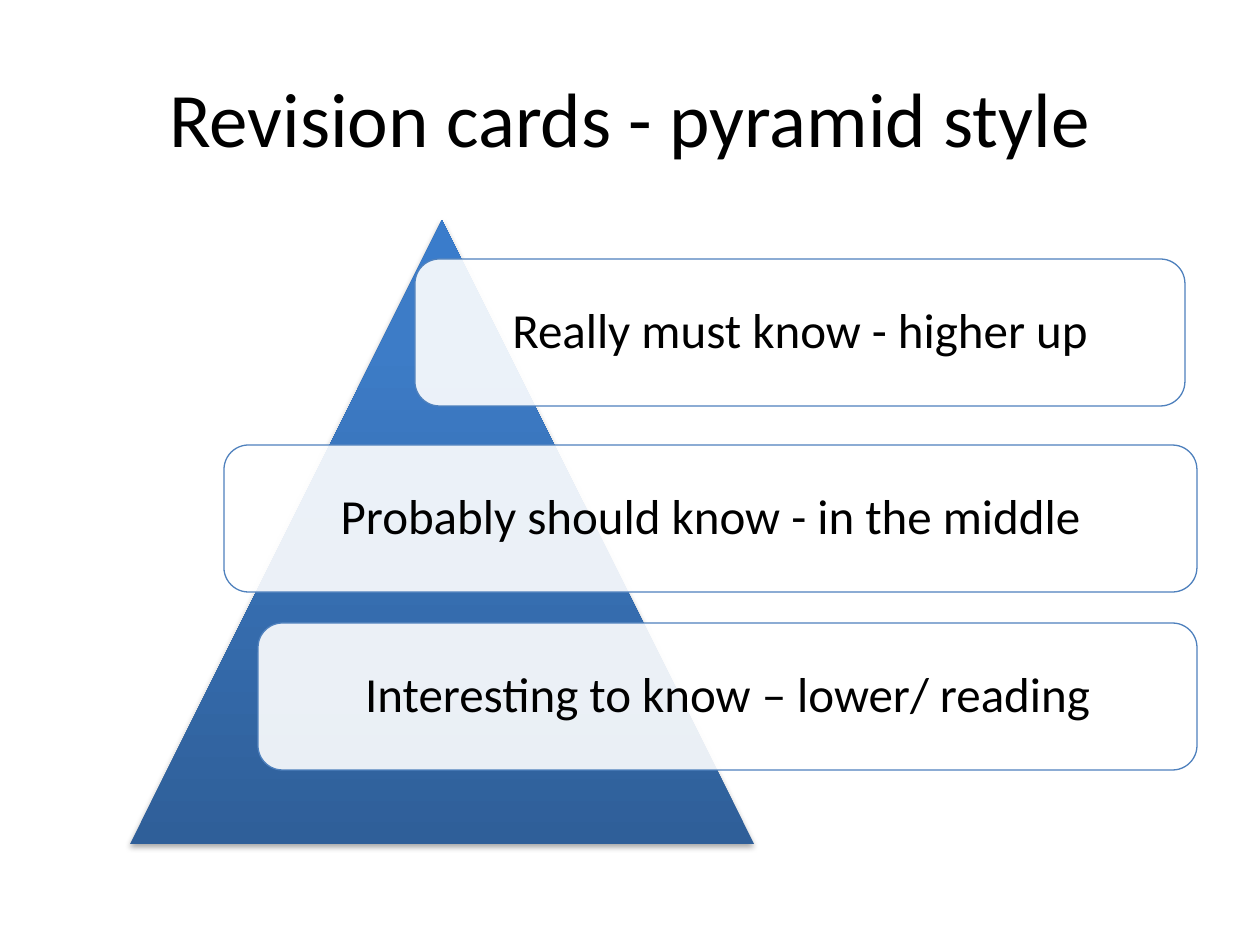
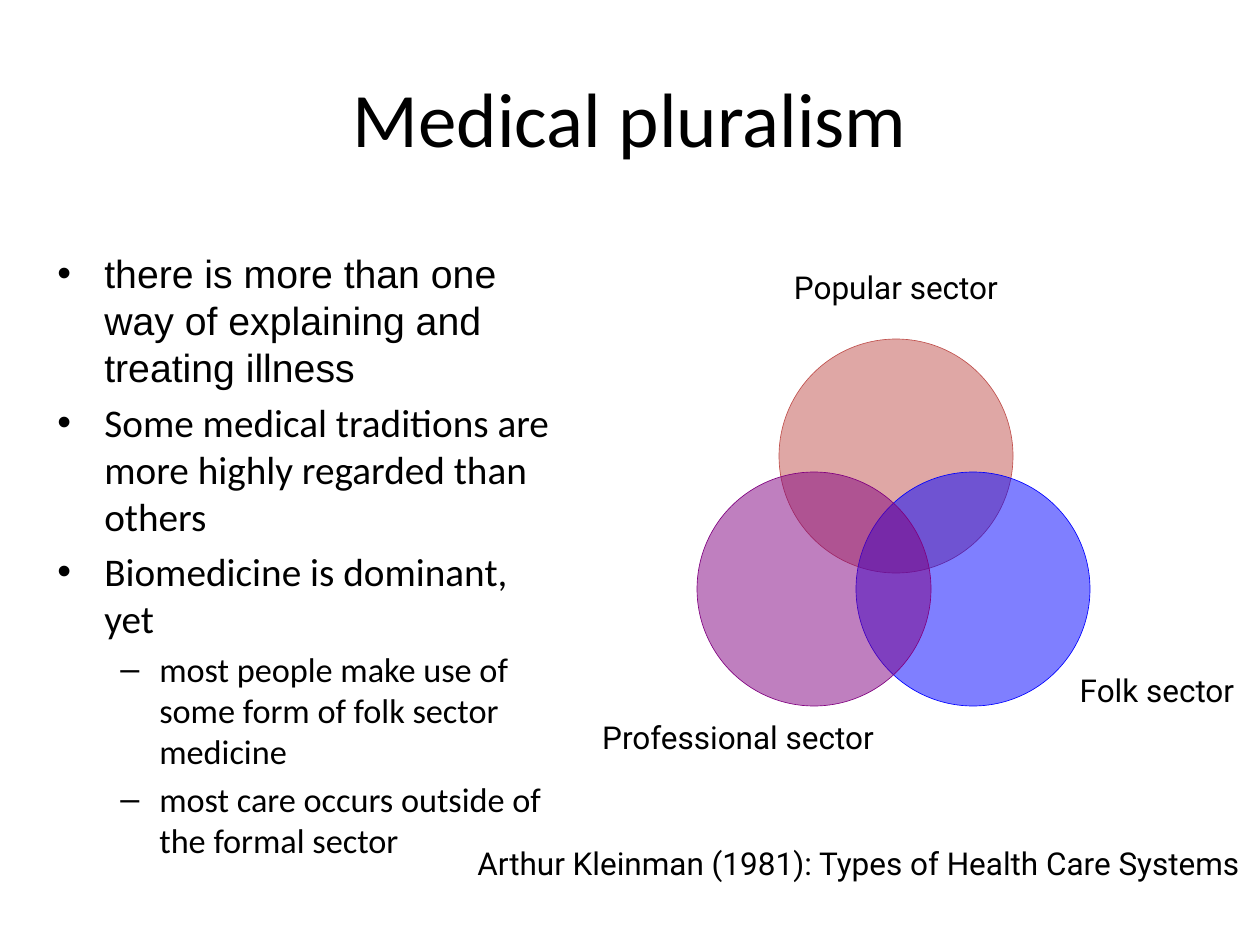
from dataclasses import dataclass

from lxml import etree
from pptx import Presentation
from pptx import util as u
from pptx.dml.color import RGBColor
from pptx.enum import shapes, text
from pptx.oxml.ns import qn

PX = 914400 / 126


@dataclass(frozen=True)
class Theme:
    font: str = "Calibri"
    label_font: str = "Roboto"
    plain_font: str = "Arial"
    ink: str = "000000"
    white: str = "FFFFFF"
    outline: str = "4F81BD"
    title: float = 44
    band: float = 28
    label: float = 18


T = Theme()

TITLE_BOX = (63, 38, 1134, 158)
PYRAMID_TITLE = "Revision cards - pyramid style"
PYRAMID_BOX = (130, 220, 624, 624)
PYRAMID_STOPS = [(0, "2F5F99"), (80, "3D7CC7"), (100, "3A7CCB")]
BAND_HEIGHT = 147
BANDS = [
    ("Really must know - higher up", 415, 259, 770),
    ("Probably should know - in the middle", 224, 445, 973),
    ("Interesting to know – lower/ reading", 258, 623, 939),
]

SECTORS_TITLE = "Medical pluralism"
CIRCLE = 234
LABEL_HEIGHT = 59
SECTORS = [
    ("Popular sector", "C0504D", (779, 339), (776, 257, 240)),
    ("Folk sector", "0000FF", (856, 472), (1056, 660, 202)),
    ("Professional sector", "800080", (697, 472), (583, 707, 310)),
]
SOURCE = "Arthur Kleinman (1981): Types of Health Care Systems"
SOURCE_BOX = (465, 838, 795, 50)
BODY_BOX = (45, 243, 528, 544)
BODY = [
    (0, "there is more than one way of explaining and treating illness", T.plain_font),
    (0, "Some medical traditions are more highly regarded than others", T.font),
    (0, "Biomedicine is dominant, yet", T.font),
    (1, "most people make use of some form of folk sector medicine", T.font),
    (1, "most care occurs outside of the formal sector", T.font),
]
LEVELS = [
    dict(size=22.4, pitch=26.9, before=4.5, bullet="•", margin=47, hang=47),
    dict(size=19.6, pitch=23.4, before=3.9, bullet="–", margin=102, hang=39),
]


def emu(*lengths):
    return [round(n * PX) for n in lengths]


def rgb(color):
    return RGBColor.from_string(color)


def child(parent, tag, **attrs):
    return etree.SubElement(parent, qn(tag), {k: str(v) for k, v in attrs.items()})


def style(p, size, font, align=None):
    p.alignment = align
    for r in p.runs:
        r.font.size = u.Pt(size)
        r.font.name = font
        r.font.color.rgb = rgb(T.ink)


def add_text(slide, box, words, size, font, align=text.PP_ALIGN.CENTER,
             anchor=text.MSO_ANCHOR.MIDDLE, wrap=True):
    tf = slide.shapes.add_textbox(*emu(*box)).text_frame
    tf.word_wrap = wrap
    tf.vertical_anchor = anchor
    tf.text = words
    style(tf.paragraphs[0], size, font, align)
    return tf


def add_shape(slide, kind, box):
    sp = slide.shapes.add_shape(kind, *emu(*box))
    sp.shadow.inherit = False
    return sp


def add_glass(slide, kind, box, color, opacity, line, width):
    sp = add_shape(slide, kind, box)
    sp.fill.solid()
    sp.fill.fore_color.rgb = rgb(color)
    clr = sp._element.spPr.find(qn("a:solidFill"))[0]
    child(clr, "a:alpha", val=opacity * 1000)
    sp.line.color.rgb = rgb(line)
    sp.line.width = u.Pt(width)
    return sp


def add_slide(prs, title):
    slide = prs.slides.add_slide(prs.slide_layouts[6])
    add_text(slide, TITLE_BOX, title, T.title, T.font)
    return slide


def add_pyramid(slide):
    sp = add_shape(slide, shapes.MSO_SHAPE.ISOSCELES_TRIANGLE, PYRAMID_BOX)
    sp.line.fill.background()
    sp.fill.gradient()
    sp.fill.gradient_angle = 90
    spPr = sp._element.spPr
    stops = spPr.find(".//" + qn("a:gsLst"))
    for old in list(stops):
        stops.remove(old)
    for pos, color in PYRAMID_STOPS:
        child(child(stops, "a:gs", pos=pos * 1000), "a:srgbClr", val=color)
    shadow = child(spPr.find(qn("a:effectLst")), "a:outerShdw",
                   blurRad=u.Pt(3.1), dist=u.Pt(1.8), dir=5400000, rotWithShape=0)
    child(child(shadow, "a:srgbClr", val=T.ink), "a:alpha", val=35000)


def add_band(slide, words, left, top, width):
    sp = add_glass(slide, shapes.MSO_SHAPE.ROUNDED_RECTANGLE,
                   (left, top, width, BAND_HEIGHT), T.white, 90, T.outline, 0.75)
    tf = sp.text_frame
    tf.word_wrap = True
    tf.vertical_anchor = text.MSO_ANCHOR.MIDDLE
    tf.margin_left = tf.margin_right = tf.margin_top = tf.margin_bottom = emu(15)[0]
    tf.text = words
    p = tf.paragraphs[0]
    p.line_spacing = 0.9
    style(p, T.band, T.font, text.PP_ALIGN.CENTER)


def add_body(slide):
    tf = slide.shapes.add_textbox(*emu(*BODY_BOX)).text_frame
    tf.word_wrap = True
    for i, (level, words, font) in enumerate(BODY):
        look = LEVELS[level]
        p = tf.add_paragraph() if i else tf.paragraphs[0]
        p.text = words
        p.level = level
        p.line_spacing = u.Pt(look["pitch"])
        p.space_before = u.Pt(look["before"] if i else 0)
        style(p, look["size"], font, text.PP_ALIGN.LEFT)
        pPr = p._p.get_or_add_pPr()
        margin, hang = emu(look["margin"], look["hang"])
        pPr.set("marL", str(margin))
        pPr.set("indent", str(-hang))
        child(pPr, "a:buFont", typeface=T.plain_font)
        child(pPr, "a:buChar", char=look["bullet"])


def pyramid_slide(prs):
    slide = add_slide(prs, PYRAMID_TITLE)
    add_pyramid(slide)
    for band in BANDS:
        add_band(slide, *band)


def sectors_slide(prs):
    slide = add_slide(prs, SECTORS_TITLE)
    add_text(slide, SOURCE_BOX, SOURCE, T.label, T.label_font,
             text.PP_ALIGN.LEFT, text.MSO_ANCHOR.TOP, wrap=False)
    for name, color, circle_at, label_at in SECTORS:
        add_glass(slide, shapes.MSO_SHAPE.OVAL, (*circle_at, CIRCLE, CIRCLE),
                  color, 50, color, 0.37)
        add_text(slide, (*label_at, LABEL_HEIGHT), name, T.label, T.label_font, wrap=False)
    add_body(slide)


def main():
    prs = Presentation()
    prs.slide_width, prs.slide_height = emu(1260, 945)
    pyramid_slide(prs)
    sectors_slide(prs)
    prs.save("out.pptx")


if __name__ == "__main__":
    main()
